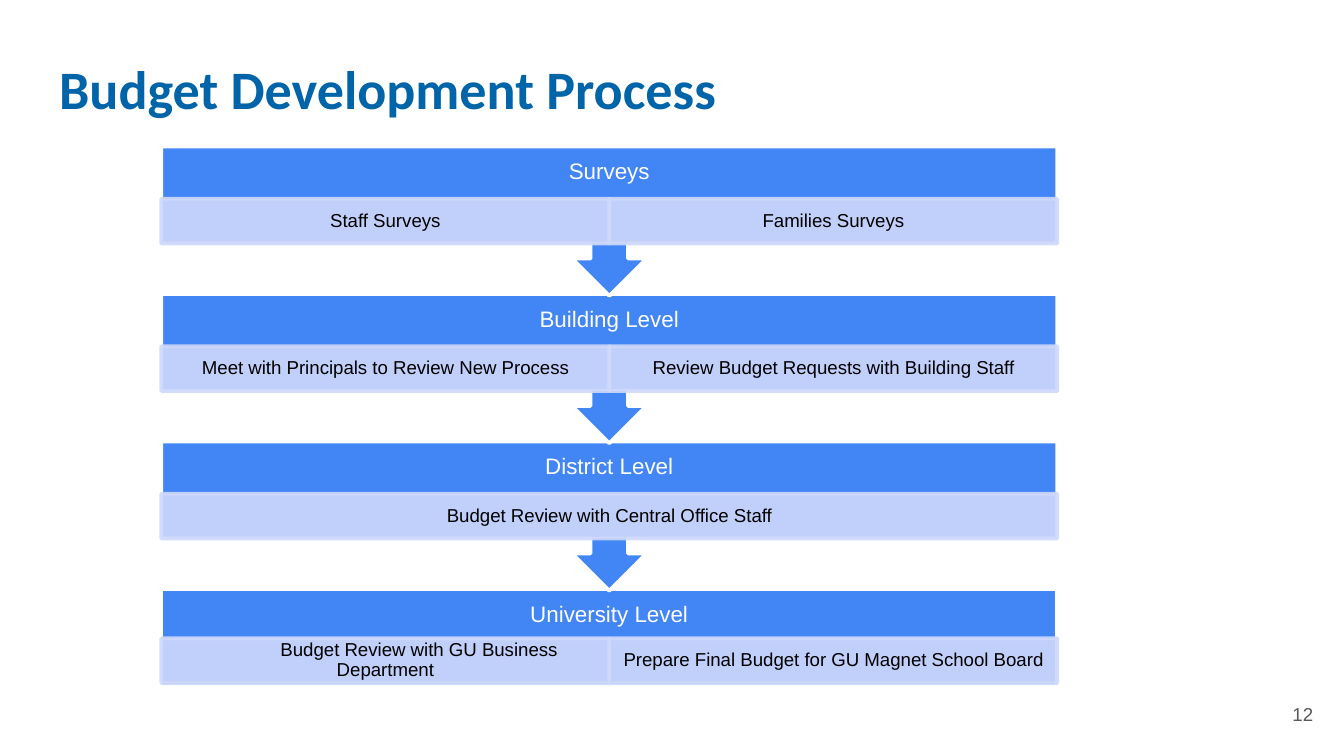
from typing import NamedTuple
from pptx import Presentation
from pptx.dml.color import RGBColor as Rgb
from pptx.enum.shapes import MSO_SHAPE as Kind
from pptx.enum.text import MSO_ANCHOR as Anchor, MSO_AUTO_SIZE as Fit, PP_ALIGN as Align
from pptx.oxml.ns import qn
from pptx.util import Pt
from lxml.etree import SubElement

HUES = {
    "title": "0064A8",
    "band": "4285F4",
    "cell": "CFD9FB",
    "white": "FFFFFF",
    "black": "000000",
    "gray": "595959",
}


class Box(NamedTuple):
    left: float
    top: float
    width: float
    height: float


class Font(NamedTuple):
    size: float
    hue: str
    face: str = "Arial"
    bold: bool = False


class Stage(NamedTuple):
    name: str
    tasks: tuple[str, ...]


STAGES = [
    Stage("Surveys", ("Staff Surveys", "Families Surveys")),
    Stage("Building Level", ("Meet with Principals to Review New Process",
                             "Review Budget Requests with Building Staff")),
    Stage("District Level", ("Budget Review with Central Office Staff",)),
    Stage("University Level", ("\tBudget Review with GU Business Department",
                               "Prepare Final Budget for GU Magnet School Board")),
]

LEFT, TOP, WIDTH, STEP = 86.4, 78.5, 480, 79
HEAD, CELL = 28, 24
HEAD_FONT = Font(12, "white")
CELL_FONT = Font(10, "black")


def place(box: Box) -> tuple:
    return tuple(Pt(v) for v in box)


def write(shape, text: str, font: Font, align=Align.CENTER,
          anchor=Anchor.MIDDLE, pad=(7.2, 7.2), gap: float = 1) -> None:
    frame = shape.text_frame
    frame.text = text
    frame.word_wrap = True
    frame.auto_size = Fit.NONE
    frame.vertical_anchor = anchor
    frame.margin_left = frame.margin_right = Pt(pad[0])
    frame.margin_top = frame.margin_bottom = Pt(pad[1])
    para = frame.paragraphs[0]
    para.alignment = align
    para.line_spacing = gap
    for run in para.runs:
        run.font.name = font.face
        run.font.size = Pt(font.size)
        run.font.bold = font.bold
        run.font.color.rgb = Rgb.from_string(HUES[font.hue])


def label(slide, box: Box, text: str, font: Font, **opts) -> None:
    write(slide.shapes.add_textbox(*place(box)), text, font, **opts)


def block(slide, kind, box: Box, fill: str, line: str):
    shape = slide.shapes.add_shape(kind, *place(box))
    shape.shadow.inherit = False
    shape.fill.solid()
    shape.fill.fore_color.rgb = Rgb.from_string(HUES[fill])
    shape.line.color.rgb = Rgb.from_string(HUES[line])
    shape.line.width = Pt(2)
    return shape


def fade(shape, share: int) -> None:
    for hue in shape.element.spPr.iter(qn("a:srgbClr")):
        SubElement(hue, qn("a:alpha")).set("val", str(share * 1000))


def draw(slide, stage: Stage, top: float, last: bool) -> None:
    kind = Kind.RECTANGLE if last else Kind.UP_ARROW_CALLOUT
    band = block(slide, kind, Box(LEFT, top, WIDTH, 52 if last else 80), "band", "white")
    band.rotation = 0 if last else 180
    label(slide, Box(LEFT, top, WIDTH, HEAD), stage.name, HEAD_FONT,
          pad=(6.5, 6.5), gap=0.9)
    wide = WIDTH / len(stage.tasks)
    row = top + (26.5 if last else HEAD)
    for i, task in enumerate(stage.tasks):
        cell = block(slide, Kind.RECTANGLE, Box(LEFT + i * wide, row, wide, CELL),
                     "cell", "cell")
        fade(cell, 90)
        write(cell, task, CELL_FONT, pad=(5.8, 0.7), gap=0.9)


def main() -> None:
    deck = Presentation()
    deck.slide_width, deck.slide_height = Pt(720), Pt(405)
    slide = deck.slides.add_slide(deck.slide_layouts[5])
    title = slide.shapes.title
    title.left, title.top, title.width, title.height = place(Box(24.5, 22.3, 671, 45.4))
    write(title, "Budget Development Process", Font(29, "title", "Calibri", True),
          align=Align.LEFT, anchor=Anchor.TOP)
    label(slide, Box(667.4, 367.2, 43.2, 31), "12", Font(10, "gray"), align=Align.RIGHT)
    final = len(STAGES) - 1
    for i, stage in reversed(list(enumerate(STAGES))):
        draw(slide, stage, TOP + i * STEP, i == final)
    deck.save("out.pptx")


if __name__ == "__main__":
    main()
